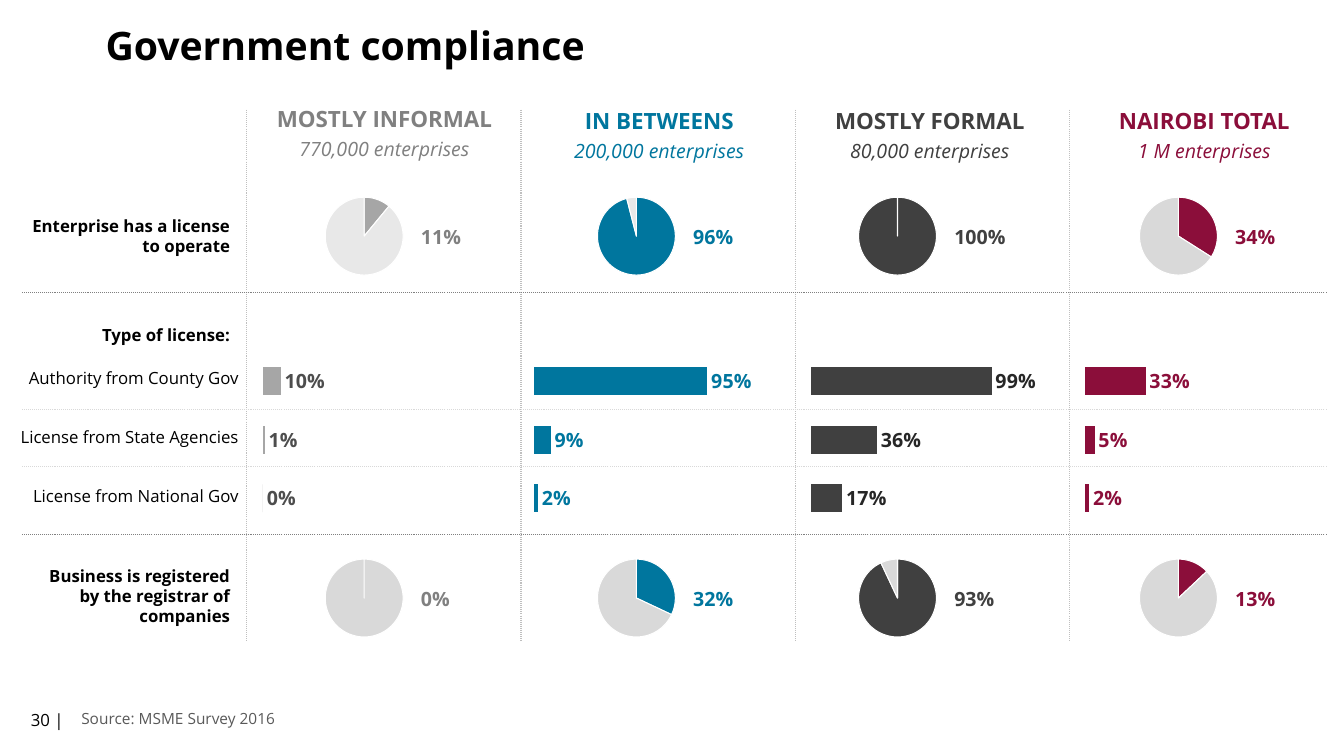
from lxml import etree
from pptx import Presentation
from pptx.chart.data import CategoryChartData
from pptx.dml.color import RGBColor
from pptx.enum import chart as ch, dml, shapes, text
from pptx.oxml.ns import qn
from pptx.util import Cm, Pt

FONT = "Open Sans"
BLACK, WHITE = RGBColor(0, 0, 0), RGBColor(255, 255, 255)
SILVER, GREY = RGBColor(0xA6, 0xA6, 0xA6), RGBColor(0x80, 0x80, 0x80)
RULE, LIGHT, PALE = (RGBColor(v, v, v) for v in (0xBF, 0xD9, 0xE8))
SMOKE, INK, NIGHT = (RGBColor(v, v, v) for v in (0x4D, 0x40, 0x26))
NOTE = RGBColor(0x59, 0x59, 0x59)
TEAL, WINE = RGBColor(0, 0x76, 0x9E), RGBColor(0x8B, 0x0E, 0x3A)
LEFT, CENTER, RIGHT = text.PP_ALIGN.LEFT, text.PP_ALIGN.CENTER, text.PP_ALIGN.RIGHT

# Content: one group per column; boxes are in cm
GROUPS = [
    dict(name="MOSTLY INFORMAL", size="770,000 enterprises", head=(6.63, 2.39, 6.12),
         color=GREY, fill=SILVER, bar_text=SMOKE, pie_x=6.45, bar=(-0.33, 13.64),
         licensed=11, rest=PALE, types=(0.10, 0.01, 0), registered=0),
    dict(name="IN BETWEENS", size="200,000 enterprises", head=(13.49, 2.44, 6.25),
         color=TEAL, fill=TEAL, bar_text=TEAL, pie_x=13.31, bar=(6.3, 14.05),
         licensed=96, rest=PALE, types=(0.95, 0.09, 0.02), registered=32),
    dict(name="MOSTLY FORMAL", size="80,000 enterprises", head=(20.68, 2.44, 5.51),
         color=INK, fill=INK, bar_text=NIGHT, pie_x=19.89, bar=(13.28, 14.05),
         licensed=100, rest=LIGHT, types=(0.99, 0.36, 0.17), registered=93),
    dict(name="NAIROBI TOTAL", size="1 M enterprises", head=(27.81, 2.44, 5.08),
         color=WINE, fill=WINE, bar_text=WINE, pie_x=26.97, bar=(20.19, 14.05),
         licensed=34, rest=LIGHT, types=(0.33, 0.05, 0.02), registered=13),
]
ROW_LABELS = [("Enterprise has a license to operate", 5.31, 1.27),
              ("Type of license:", 8.05, 0.76),
              ("Business is registered by the registrar of companies", 14.12, 1.8)]
LICENSE_TYPES = ["Authority from County Gov", "License from State Agencies",
                 "License from National Gov"]
ROW_RULES = [(7.37, GREY), (13.46, GREY), (10.31, LIGHT), (11.76, LIGHT)]

prs = Presentation()
prs.slide_width, prs.slide_height = Cm(33.87), Cm(19.05)
s = prs.slides.add_slide(prs.slide_layouts[6])


def style(font, **values):
    for key, value in dict(name=FONT, **values).items():
        if key == "color":
            font.color.rgb = value
        else:
            setattr(font, key, value)


def add_text(x, y, w, h, lines, align=LEFT, anchor=text.MSO_ANCHOR.TOP, **spacing):
    """Each line is a pair of wording and font values."""
    tf = s.shapes.add_textbox(Cm(x), Cm(y), Cm(w), Cm(h)).text_frame
    tf.word_wrap, tf.vertical_anchor = True, anchor
    for i, (words, values) in enumerate(lines):
        p = tf.add_paragraph() if i else tf.paragraphs[0]
        for key, value in dict(alignment=align, **spacing).items():
            setattr(p, key, value)
        r = p.add_run()
        r.text = words
        style(r.font, **values)


def add_rule(x1, y1, x2, y2, color):
    line = s.shapes.add_connector(shapes.MSO_CONNECTOR.STRAIGHT,
                                  Cm(x1), Cm(y1), Cm(x2), Cm(y2))
    line.line.color.rgb, line.line.width = color, Pt(0.75)
    line.line.dash_style = dml.MSO_LINE.ROUND_DOT
    etree.SubElement(line._element.spPr, qn("a:effectLst"))


def add_chart(kind, box, cats, values, plot_box):
    data = CategoryChartData()
    data.categories = cats
    data.add_series("Series 1", values)
    chart = s.shapes.add_chart(kind, *map(Cm, box), data).chart
    chart.has_legend = chart.has_title = False
    style(chart.font, size=Pt(10), color=BLACK)
    # Fixed inner plot area
    area = chart._chartSpace.chart.plotArea
    for old in area.findall(qn("c:layout")):
        area.remove(old)
    layout = etree.Element(qn("c:layout"))
    manual = etree.SubElement(layout, qn("c:manualLayout"))
    settings = [("layoutTarget", "inner"), ("xMode", "edge"), ("yMode", "edge"),
                *zip("xywh", plot_box)]
    for tag, value in settings:
        etree.SubElement(manual, qn("c:" + tag)).set("val", str(value))
    area.insert(0, layout)
    return chart


def add_bars(g):
    x, w = g["bar"]
    chart = add_chart(ch.XL_CHART_TYPE.BAR_CLUSTERED, (x, 8.63, w, 4.76),
                      ["1", "2", "3"], g["types"], (0.51, 0.05, 0.49, 0.93))
    for axis in (chart.category_axis, chart.value_axis):
        axis.visible = axis.has_major_gridlines = False
    chart.category_axis.reverse_order = True
    chart.value_axis.minimum_scale, chart.value_axis.maximum_scale = 0, 1.5
    plot = chart.plots[0]
    plot.gap_width, plot.vary_by_categories = 110, False
    bars = plot.series[0]
    bars.format.fill.solid()
    bars.format.fill.fore_color.rgb = g["fill"]
    labels = bars.data_labels
    for key, value in dict(show_value=True, number_format="0%",
                           number_format_is_linked=False,
                           position=ch.XL_LABEL_POSITION.OUTSIDE_END).items():
        setattr(labels, key, value)
    style(labels.font, size=Pt(14), bold=True, color=g["bar_text"])


def add_pie(g, y, share, rest):
    x = g["pie_x"]
    chart = add_chart(ch.XL_CHART_TYPE.PIE, (x, y, 5.46, 2.69), ["1", "2"],
                      (share, 100 - share), (0.32, 0.13, 0.36, 0.73))
    for i, color in enumerate((g["fill"], rest)):
        fmt = chart.plots[0].series[0].points[i].format
        fmt.fill.solid()
        fmt.fill.fore_color.rgb = color
        fmt.line.color.rgb, fmt.line.width = WHITE, Pt(0.75)
    add_text(x + 3.91, y + 0.93, 1.96, 0.86,
             [(f"{share}%", dict(size=Pt(14), bold=True, color=g["color"]))],
             space_after=Pt(6))


# Bars lie at the back, the last column first
for g in reversed(GROUPS):
    add_bars(g)

# Title and footer
add_text(2.41, 0.53, 27.2, 1.37,
         [("Government compliance", dict(size=Pt(28), bold=True, color=BLACK))],
         anchor=text.MSO_ANCHOR.MIDDLE, line_spacing=0.9)
add_text(0.53, 17.75, 1.75, 1.02, [("30 |", dict(size=Pt(12), color=BLACK))])
add_text(1.8, 17.75, 17.3, 0.74,
         [("Source: MSME Survey 2016", dict(size=Pt(11), color=NOTE))])

# Columns: divider, heading and two pies
for i, g in enumerate(GROUPS):
    divider = 6.22 + 6.91 * i
    add_rule(divider, 2.77, divider, 16.15, RULE)
    add_text(*g["head"], 1.73,
             [(g["name"], dict(size=Pt(16), bold=True, color=g["color"])),
              (g["size"], dict(size=Pt(14), italic=True, color=g["color"]))],
             CENTER, line_spacing=1.2)
    add_pie(g, 4.62, g["licensed"], g["rest"])
    add_pie(g, 13.74, g["registered"], LIGHT)

# Row labels
for words, y, h in ROW_LABELS:
    add_text(0.41, y, 5.64, h,
             [(words, dict(size=Pt(12), bold=True, color=BLACK))], RIGHT)

# License type table
table = s.shapes.add_table(3, 1, Cm(0.2), Cm(8.79), Cm(5.84), Cm(4.44)).table
table.first_row = table.horz_banding = False
for i, words in enumerate(LICENSE_TYPES):
    cell = table.cell(i, 0)
    cell.text = words
    cell.fill.background()
    cell.vertical_anchor = text.MSO_ANCHOR.MIDDLE
    for side in ("left", "right", "top", "bottom"):
        setattr(cell, "margin_" + side, Cm(0.02))
    p = cell.text_frame.paragraphs[0]
    p.alignment = RIGHT
    style(p.runs[0].font, size=Pt(12), color=BLACK)

# Row rules
for y, color in ROW_RULES:
    add_rule(33.43, y, 0.56, y, color)

prs.save("out.pptx")
